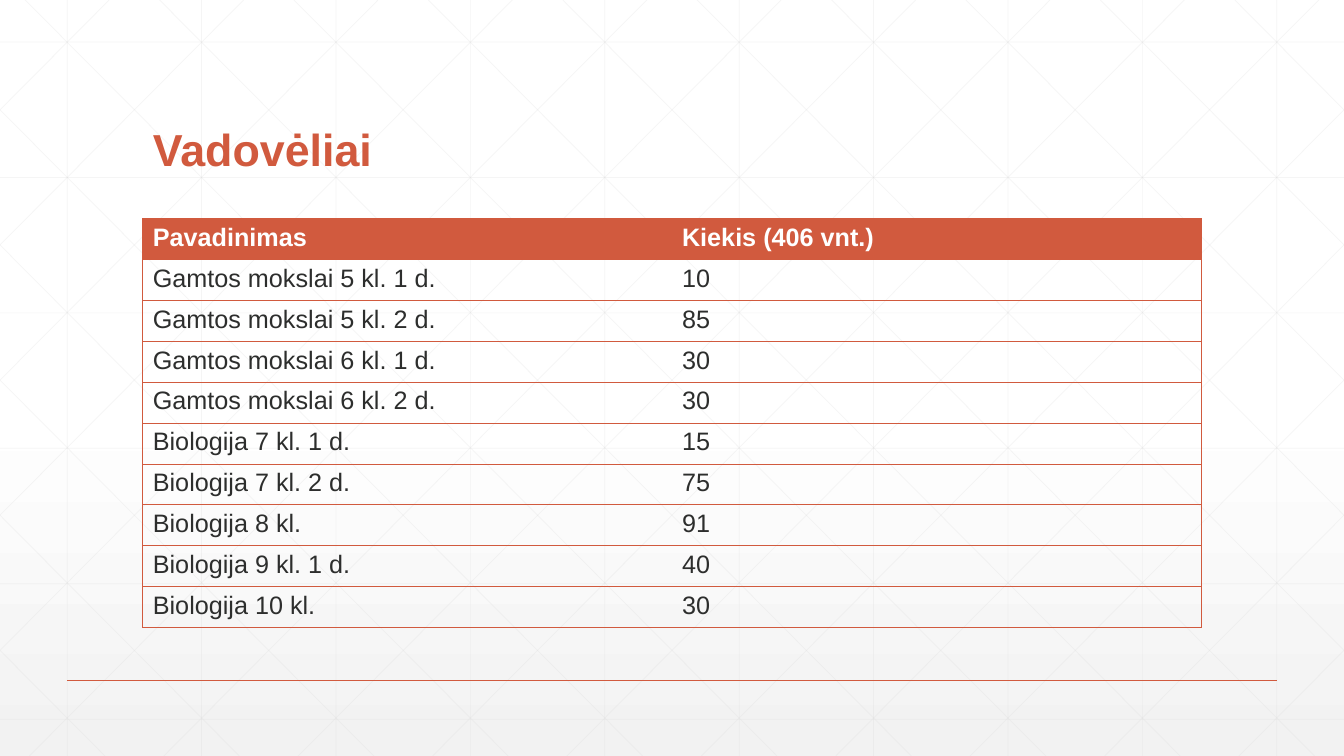
from lxml.etree import SubElement
from pptx import Presentation
from pptx.dml.color import RGBColor
from pptx.enum.shapes import MSO_CONNECTOR as Connector
from pptx.enum.text import MSO_ANCHOR as Anchor, PP_ALIGN as Align
from pptx.oxml import parse_xml
from pptx.oxml.ns import nsdecls, qn
from pptx.util import Pt

PX = 9525  # 96 px to the inch
WIDTH, HEIGHT = 1280, 720
PITCH = 128
FONT = "Arial"
ACCENT = RGBColor(0xD1, 0x5A, 0x3E)
INK = RGBColor(0x2D, 0x2E, 0x2D)
WHITE = RGBColor(0xFF, 0xFF, 0xFF)
PALE = RGBColor(0xF2, 0xF2, 0xF2)
GRID = RGBColor(0xD9, 0xD9, 0xD9)
NO_STYLE = "{2D5ABB26-0587-4C30-8999-92F81FD0307C}"

TEXTBOOKS = [
    ("Pavadinimas", "Kiekis (406 vnt.)"),
    ("Gamtos mokslai 5 kl. 1 d.", "10"),
    ("Gamtos mokslai 5 kl. 2 d.", "85"),
    ("Gamtos mokslai 6 kl. 1 d.", "30"),
    ("Gamtos mokslai 6 kl. 2 d.", "30"),
    ("Biologija 7 kl. 1 d.", "15"),
    ("Biologija 7 kl. 2 d.", "75"),
    ("Biologija 8 kl.", "91"),
    ("Biologija 9 kl. 1 d.", "40"),
    ("Biologija 10 kl.", "30"),
]


def add_span(para, text, size, color, bold):
    span = para.add_run()
    span.text = text
    span.font.name = FONT
    span.font.size = Pt(size)
    span.font.bold = bold
    span.font.color.rgb = color


def add_line(page, start, end, color, weight, opacity=100):
    ends = [round(value * PX) for value in (*start, *end)]
    line = page.shapes.add_connector(Connector.STRAIGHT, *ends)
    line.line.color.rgb = color
    line.line.width = Pt(weight)
    properties = line._element.spPr
    if opacity < 100:
        tint = properties.find(".//" + qn("a:srgbClr"))
        SubElement(tint, qn("a:alpha"), val=str(opacity * 1000))
    SubElement(properties, qn("a:effectLst"))


def paint_background(page):
    stops = "".join(
        f'<a:gs pos="{percent * 1000}"><a:srgbClr val="{color}"/></a:gs>'
        for percent, color in ((0, WHITE), (53, WHITE), (100, PALE)))
    page._element.cSld.insert(0, parse_xml(
        f'<p:bg {nsdecls("p", "a")}><p:bgPr><a:gradFill><a:gsLst>{stops}</a:gsLst>'
        '<a:lin ang="5400000" scaled="0"/></a:gradFill><a:effectLst/></p:bgPr></p:bg>'))


def draw_lattice(page, width, height):
    def thread(start, end):
        add_line(page, start, end, GRID, 0.5, opacity=25)

    # Upright and level lines
    for x in range(64, width, PITCH):
        thread((x, 0), (x, height))
    for y in range(40, height, 129):
        thread((0, y), (width, y))

    # Diagonals cut at the slide edges, each with its mirror twin
    run = 716
    for top_x in range(24 - 5 * PITCH, width, PITCH):
        left, right = max(top_x, 0), min(top_x + run, width)
        upper, lower = ((x - top_x) * height / run for x in (left, right))
        thread((left, upper), (right, lower))
        thread((width - left, upper), (width - right, lower))


def place_title(page, box, text):
    title = page.shapes.title
    title.left, title.top, title.width, title.height = (v * PX for v in box)
    frame = title.text_frame
    frame.word_wrap = True
    frame.vertical_anchor = Anchor.BOTTOM
    para = frame.paragraphs[0]
    para.alignment = Align.LEFT
    para.line_spacing = 0.9
    add_span(para, text, 32, ACCENT, True)
    page.shapes._spTree.append(title._element)  # in front of the lattice


def set_borders(cell, sides):
    properties = cell._tc.get_or_add_tcPr()
    for place, side in enumerate(sides):
        properties.insert(place, parse_xml(
            f'<a:ln{side} {nsdecls("a")} w="{Pt(0.5)}"><a:solidFill>'
            f'<a:srgbClr val="{ACCENT}"/></a:solidFill></a:ln{side}>'))


def place_table(page, box, rows):
    frame = page.shapes.add_table(len(rows), 2, *(v * PX for v in box))
    table = frame.table
    table.horz_banding = False
    table._tbl.tblPr.find(qn("a:tableStyleId")).text = NO_STYLE
    for row_index, texts in enumerate(rows):
        header = row_index == 0
        table.rows[row_index].height = box[3] * PX // len(rows)
        for column, text in enumerate(texts):
            cell = table.cell(row_index, column)
            if header:
                cell.fill.solid()
                cell.fill.fore_color.rgb = ACCENT
            else:
                cell.fill.background()
            set_borders(cell, ("L", "T", "B") if column == 0 else ("R", "T", "B"))
            add_span(cell.text_frame.paragraphs[0], text, 18,
                     WHITE if header else INK, header)


def build_textbook_slide(deck):
    page = deck.slides.add_slide(deck.slide_layouts[5])
    paint_background(page)
    draw_lattice(page, WIDTH, HEIGHT)
    add_line(page, (64, 648), (WIDTH - 64, 648), ACCENT, 1)
    place_title(page, (136, 53, 1008, 120), "Vadovėliai")
    place_table(page, (136, 208, 1008, 390), TEXTBOOKS)


def main():
    deck = Presentation()
    deck.slide_width, deck.slide_height = WIDTH * PX, HEIGHT * PX
    build_textbook_slide(deck)
    deck.save("out.pptx")


if __name__ == "__main__":
    main()
